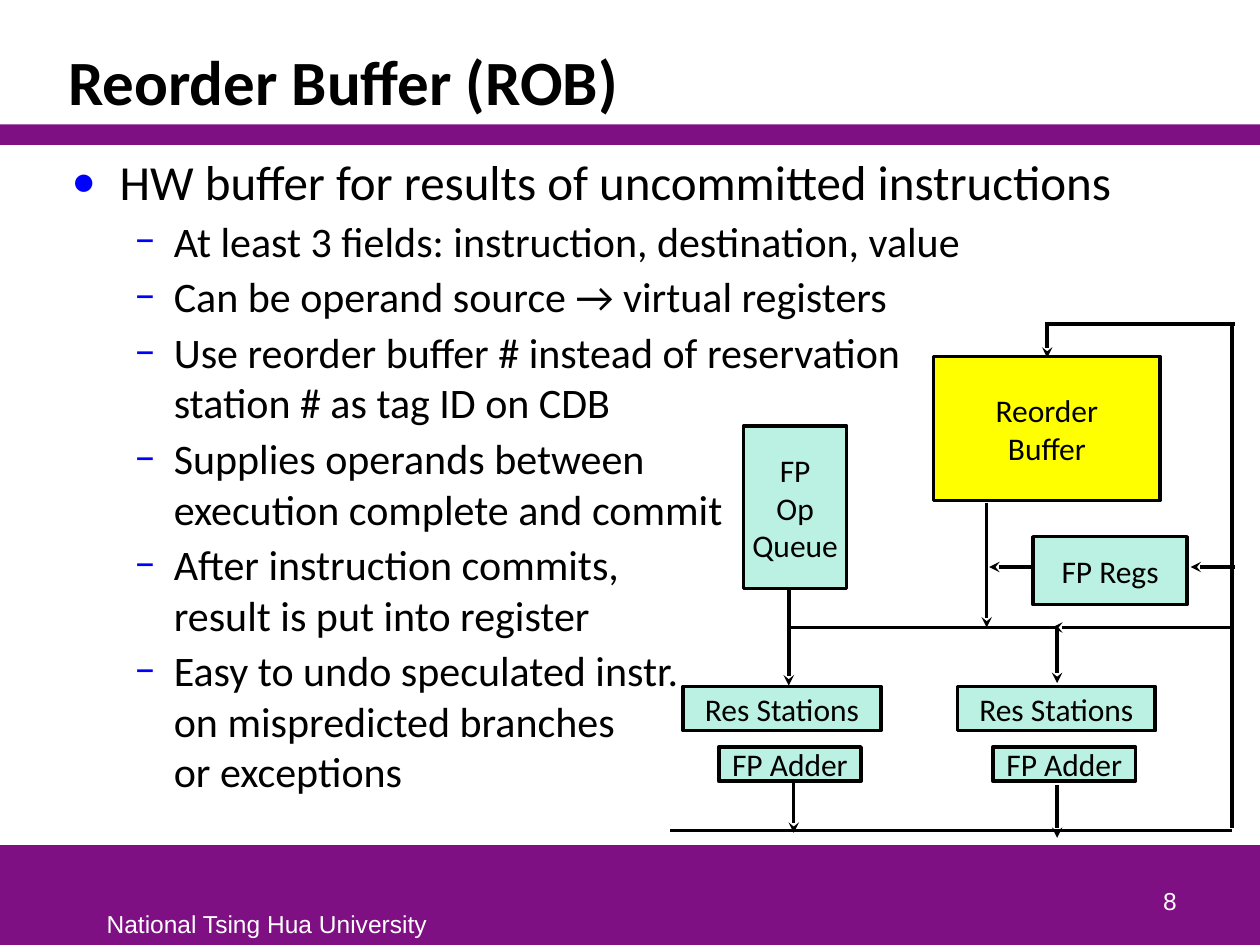
"""Build the Reorder Buffer slide with its datapath diagram."""
from pptx import Presentation, util as u
from pptx.dml.color import RGBColor
from pptx.enum import shapes, text
from pptx.oxml.ns import qn
from lxml import etree

BLACK, WHITE, PURPLE = "000000", "FFFFFF", "7F1084"
MINT, YELLOW, BLUE = "BBF1E3", "FFFF00", "0000FF"
MID, LEFT, RIGHT = text.PP_ALIGN.CENTER, text.PP_ALIGN.LEFT, text.PP_ALIGN.RIGHT

TITLE = "Reorder Buffer (ROB)"
POINTS = [
    (0, "HW buffer for results of uncommitted instructions"),
    (1, "At least 3 fields: instruction, destination, value"),
    (1, "Can be operand source → virtual registers"),
    (1, "Use reorder buffer # instead of reservation \nstation # as tag ID on CDB"),
    (1, "Supplies operands between \nexecution complete and commit"),
    (1, "After instruction commits, \nresult is put into register"),
    (1, "Easy to undo speculated instr.\non mispredicted branches \nor exceptions"),
]
LEVELS = [("•", 0.97, 28), ("−", 2.06, 24)]
HANGS = [0.97, 0.79]
BARS = [(0, 17.04, 25.4, 2.01), (0, 2.51, 25.4, 0.41)]
UNITS = [
    ("Reorder\nBuffer", YELLOW, (18.82, 7.19, 4.57, 2.9)),
    ("FP Regs", MINT, (20.83, 10.82, 3.1, 1.37)),
    ("FP\nOp\nQueue", MINT, (14.99, 8.59, 2.08, 3.28)),
]
for left in (13.77, 19.3):
    UNITS += [("Res Stations", MINT, (left, 13.84, 3.99, 0.89)),
              ("FP Adder", MINT, (left + 0.72, 15.06, 2.87, 0.69))]
BUS, FEED, READ, TOP, LOW = 24.84, 12.65, 11.43, 6.53, 16.74
WIRES = [
    (13.51, LOW, BUS, LOW),
    (BUS, TOP, BUS, 16.69),
    (24.89, TOP, 21.06, TOP),
    (15.9, FEED, 21.31, FEED),
]
ARROWS = [
    (21.11, TOP, 21.11, 7.21),
    (16, 15.72, 16, 16.79),
    (21.31, 15.82, 21.31, 16.89),
    (15.9, 11.89, 15.9, 13.82),
    (21.31, FEED, 21.31, 13.77),
    (19.89, 10.13, 19.89, FEED),
    (20.85, READ, 19.94, READ),
    (BUS, FEED, 21.21, FEED),
    (24.89, READ, 24, READ),
]


def hue(code):
    return RGBColor.from_string(code)


def place(shape, spot):
    shape.left, shape.top, shape.width, shape.height = map(u.Cm, spot)


def write(para, words, size=18, face="Calibri", tint=BLACK, bold=False, align=LEFT):
    para.text = words
    para.alignment = align
    for run in para.runs:
        font = run.font
        font.size, font.name, font.bold = u.Pt(size), face, bold
        font.color.rgb = hue(tint)
    for gap in para._p.findall(qn("a:br")):
        etree.SubElement(gap, qn("a:rPr")).set("sz", str(size * 100))


def bullet(para, sign, left, hang):
    props = para._p.get_or_add_pPr()
    props.set("marL", str(u.Cm(left)))
    props.set("indent", str(-u.Cm(hang)))
    paint = etree.SubElement(props, qn("a:buClr"))
    etree.SubElement(paint, qn("a:srgbClr")).set("val", BLUE)
    etree.SubElement(props, qn("a:buFont")).set("typeface", "Calibri")
    etree.SubElement(props, qn("a:buChar")).set("char", sign)


def block(slide, spot, fill, line=None):
    shape = slide.shapes.add_shape(shapes.MSO_SHAPE.RECTANGLE, 0, 0, 0, 0)
    place(shape, spot)
    shape.shadow.inherit = False
    shape.fill.solid()
    shape.fill.fore_color.rgb = hue(fill)
    if line:
        shape.line.color.rgb = hue(line)
        shape.line.width = u.Pt(2)
    else:
        shape.line.fill.background()
    return shape


def unit(slide, words, fill, spot):
    frame = block(slide, spot, fill, BLACK).text_frame
    frame.word_wrap = False
    frame.vertical_anchor = text.MSO_ANCHOR.MIDDLE
    for i, part in enumerate(words.split("\n")):
        para = frame.add_paragraph() if i else frame.paragraphs[0]
        write(para, part, align=MID)


def wire(slide, ends, head=False):
    line = slide.shapes.add_connector(shapes.MSO_CONNECTOR.STRAIGHT, *map(u.Cm, ends))
    line.line.color.rgb = hue(BLACK)
    line.line.width = u.Pt(2)
    if head:
        etree.SubElement(line.line._get_or_add_ln(), qn("a:tailEnd")).set("type", "stealth")
    etree.SubElement(line._element.spPr, qn("a:effectLst"))


def label(slide, words, spot, wrap, anchor, align):
    box = slide.shapes.add_textbox(*map(u.Cm, spot))
    box.text_frame.word_wrap = wrap
    box.text_frame.vertical_anchor = anchor
    write(box.text_frame.paragraphs[0], words, size=14, face="Arial", tint=WHITE, align=align)


def main():
    deck = Presentation()
    deck.slide_width, deck.slide_height = u.Cm(25.4), u.Cm(19.05)
    slide = deck.slides.add_slide(deck.slide_layouts[1])
    for spot in BARS:
        block(slide, spot, PURPLE)

    head, body = slide.placeholders
    place(head, (1.12, 0.64, 22.78, 1.88))
    head.text_frame.auto_size = text.MSO_AUTO_SIZE.NONE
    head.text_frame.vertical_anchor = text.MSO_ANCHOR.BOTTOM
    para = head.text_frame.paragraphs[0]
    write(para, TITLE, size=36, bold=True)
    para.line_spacing = 0.85

    place(body, (1.19, 2.92, 22.71, 13.79))
    frame = body.text_frame
    frame.auto_size = text.MSO_AUTO_SIZE.NONE
    for i, (level, words) in enumerate(POINTS):
        para = frame.add_paragraph() if i else frame.paragraphs[0]
        sign, left, size = LEVELS[level]
        para.level = level
        bullet(para, sign, left, HANGS[level])
        write(para, words, size=size)
        para.space_before = u.Pt(3 if i else 0)

    label(slide, "National Tsing Hua University", (1.9, 18.21, 7.01, 0.84),
          False, text.MSO_ANCHOR.TOP, LEFT)
    label(slide, "8", (18.69, 17.3, 5.28, 1.27), True, text.MSO_ANCHOR.BOTTOM, RIGHT)
    for item in UNITS:
        unit(slide, *item)
    for ends in WIRES:
        wire(slide, ends)
    for ends in ARROWS:
        wire(slide, ends, head=True)
    deck.save("out.pptx")


if __name__ == "__main__":
    main()
